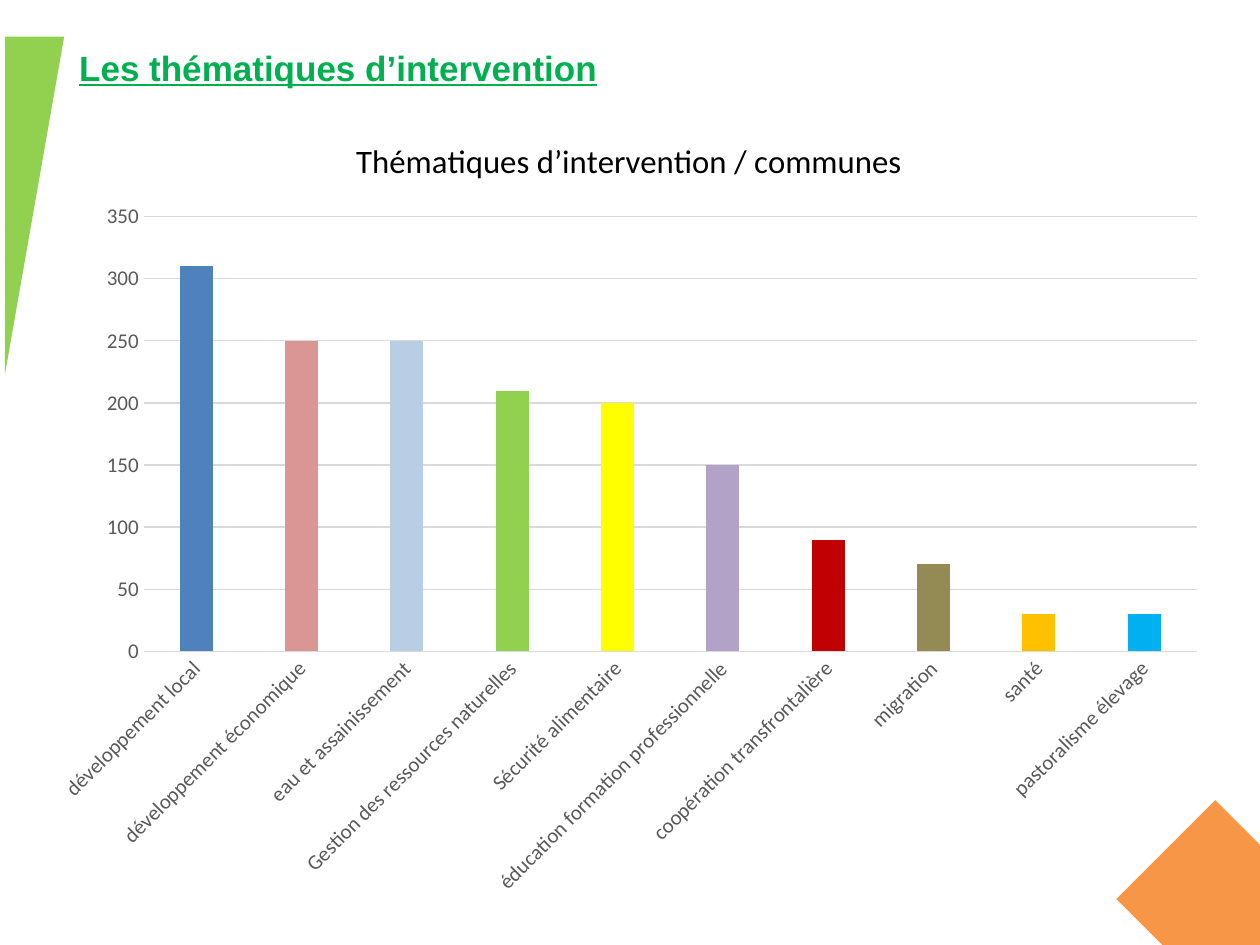
from dataclasses import dataclass
from lxml.etree import SubElement as Sub
from pptx import Presentation
from pptx.chart.data import CategoryChartData as Data
from pptx.dml.color import RGBColor as Rgb
from pptx.enum.chart import XL_CHART_TYPE as Kind, XL_TICK_MARK as Tick
from pptx.enum.shapes import MSO_SHAPE as Form
from pptx.enum.text import MSO_AUTO_SIZE as Fit
from pptx.oxml.ns import qn
from pptx.util import Pt


@dataclass(frozen=True)
class Theme:
    """Colours, fonts and type sizes of the slide."""
    green: str = "00B050"
    lime: str = "92D050"
    orange: str = "F79646"
    black: str = "000000"
    grey: str = "595959"
    rule: str = "D9D9D9"
    head: str = "Arial"
    body: str = "Calibri"
    big: int = 20
    mid: float = 18.7
    small: int = 12
    base: int = 10
    line: float = 0.75


THEME = Theme()
SCALE = 9144
THEMES = [
    ("développement local", 310, "4F81BD"),
    ("développement économique", 250, "D99694"),
    ("eau et assainissement", 250, "B9CDE5"),
    ("Gestion des ressources naturelles", 210, "92D050"),
    ("Sécurité alimentaire", 200, "FFFF00"),
    ("éducation formation professionnelle", 150, "B3A2C7"),
    ("coopération transfrontalière", 90, "C00000"),
    ("migration", 70, "948A54"),
    ("santé", 30, "FFC000"),
    ("pastoralisme élevage", 30, "00B0F0"),
]


def px(*nums):
    """Turn px lengths into EMU."""
    return [num * SCALE for num in nums]


def paint(fill, color):
    """Give a fill one solid colour."""
    fill.solid()
    fill.fore_color.rgb = Rgb.from_string(color)


def style(font, name, size, color):
    """Set the face, size and colour of a font."""
    font.name, font.size = name, Pt(size)
    font.color.rgb = Rgb.from_string(color)


def rule(line):
    """Draw a line as a thin grey rule."""
    line.width = Pt(THEME.line)
    line.color.rgb = Rgb.from_string(THEME.rule)


def add_form(slide, form, box, color):
    """Add a plain filled shape."""
    shape = slide.shapes.add_shape(form, *px(*box))
    shape.shadow.inherit = False
    paint(shape.fill, color)
    shape.line.fill.background()
    return shape


def add_head(slide, text, box):
    """Add the underlined heading."""
    frame = slide.shapes.add_textbox(*px(*box)).text_frame
    frame.word_wrap = True
    frame.auto_size = Fit.SHAPE_TO_FIT_TEXT
    para = frame.paragraphs[0]
    para.text = text
    para.line_spacing = 1.15
    para.space_before = para.space_after = Pt(3)
    style(para.font, THEME.head, THEME.big, THEME.green)
    para.font.bold = para.font.underline = True


def place(part, size, spot, inner=False):
    """Fix a chart part at px inside a chart of the given size."""
    lay = part.find(qn("c:layout"))
    if lay is None:
        lay = part.makeelement(qn("c:layout"))
        text = part.find(qn("c:tx"))
        if text is None:
            part.insert(0, lay)
        else:
            text.addnext(lay)
    for old in list(lay):
        lay.remove(old)
    man = Sub(lay, qn("c:manualLayout"))
    if inner:
        Sub(man, qn("c:layoutTarget")).set("val", "inner")
    for key in "xy":
        Sub(man, qn(f"c:{key}Mode")).set("val", "edge")
    for key, num, full in zip("xywh", spot, size * 2):
        Sub(man, qn(f"c:{key}")).set("val", str(num / full))


def set_axes(chart):
    """Style both axes and slant the category labels."""
    cat, val = chart.category_axis, chart.value_axis
    for axis in (cat, val):
        axis.major_tick_mark = axis.minor_tick_mark = Tick.NONE
        style(axis.tick_labels.font, THEME.body, THEME.small, THEME.grey)
    rule(cat.format.line)
    body = cat.tick_labels.font._element.getparent().getparent().getparent()
    body.find(qn("a:bodyPr")).set("rot", "-2700000")
    val.format.line.fill.background()
    rule(val.major_gridlines.format.line)
    val.minimum_scale, val.maximum_scale, val.major_unit = 0, 350, 50


def add_bars(slide, title, box):
    """Add the column chart with one colour per theme."""
    names, vals, colors = zip(*THEMES)
    data = Data()
    data.categories = names
    data.add_series("Series 1", vals)
    frame = slide.shapes.add_chart(Kind.COLUMN_CLUSTERED, *px(*box), data)
    chart = frame.chart
    style(chart.font, THEME.body, THEME.base, THEME.black)
    chart.has_legend = False
    chart.has_title = True
    chart.chart_title.include_in_layout = False
    para = chart.chart_title.text_frame.paragraphs[0]
    para.text = title
    style(para.font, THEME.body, THEME.mid, THEME.black)
    para.font.bold = False
    plot = chart.plots[0]
    plot.vary_by_categories = False
    plot.gap_width, plot.overlap = 219, -27
    bars = plot.series[0]
    paint(bars.format.fill, colors[0])
    for spot, color in enumerate(colors[1:], 1):
        paint(bars.points[spot].format.fill, color)
    set_axes(chart)
    root = chart.element.chart
    size = box[2:]
    place(root.find(qn("c:title")), size, (248, 16))
    place(root.plotArea, size, (84, 83, 836, 345), True)


def main():
    """Build and save the slide."""
    deck = Presentation()
    deck.slide_width, deck.slide_height = px(1000, 750)
    slide = deck.slides.add_slide(deck.slide_layouts[6])
    add_form(slide, Form.DIAMOND, (886, 635, 157, 157), THEME.orange)
    wedge = add_form(slide, Form.RIGHT_TRIANGLE, (4, 29, 47, 268), THEME.lime)
    wedge.rotation = 180
    wedge.element.spPr.get_or_add_xfrm().set("flipH", "1")
    add_head(slide, "Les thématiques d’intervention", (53, 27, 508, 47))
    add_bars(slide, "Thématiques d’intervention / communes", (30, 89, 939, 634))
    deck.save("out.pptx")


if __name__ == "__main__":
    main()
